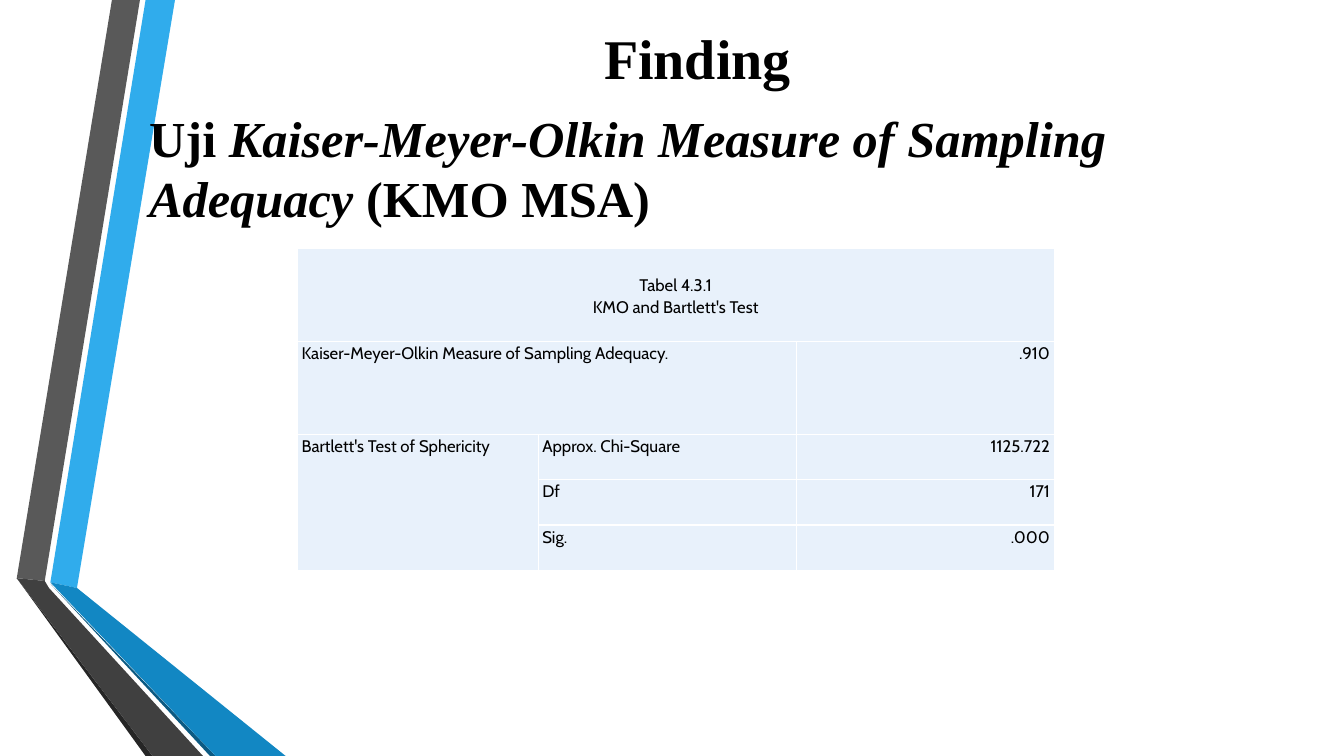
from lxml.etree import SubElement
from pptx import Presentation
from pptx.dml.color import RGBColor
from pptx.enum.text import MSO_ANCHOR as Anchor, MSO_AUTO_SIZE as Fit, PP_ALIGN as Align
from pptx.oxml.ns import qn
from pptx.util import Pt

BLACK = RGBColor(0x00, 0x00, 0x00)
WHITE = RGBColor(0xFF, 0xFF, 0xFF)
PALE = RGBColor(0xE8, 0xF1, 0xFB)
SKY = RGBColor(0x30, 0xAC, 0xEC)
BLUE = RGBColor(0x12, 0x87, 0xC3)
NAVY = RGBColor(0x0C, 0x5A, 0x82)
GRAY = RGBColor(0x59, 0x59, 0x59)
DARK = RGBColor(0x40, 0x40, 0x40)
COAL = RGBColor(0x26, 0x26, 0x26)
SERIF, SANS = "Times New Roman", "Cabin"

TITLE = "Finding"
HEAD = [
    ("Uji ", False),
    ("Kaiser-Meyer-Olkin Measure of Sampling Adequacy", True),
    (" (KMO MSA)", False),
]
ROWS = [
    ("Tabel 4.3.1\nKMO and Bartlett's Test", "", ""),
    ("Kaiser-Meyer-Olkin Measure of Sampling Adequacy.", "", ".910"),
    ("Bartlett's Test of Sphericity", "Approx. Chi-Square", "1125.722"),
    ("", "Df", "171"),
    ("", "Sig.", ".000"),
]
SPANS = [((0, 0), (0, 2)), ((1, 0), (1, 1)), ((2, 0), (4, 0))]
WIDTHS = [172, 184.3, 184.3]
HEIGHTS = [66.2, 66.2, 32.4, 32.4, 32.4]
BANDS = [
    (SKY, [(36, 416.2), (55.4, 419.8), (124.6, 0), (104.4, 0)]),
    (GRAY, [(100.1, 0), (79.9, 0), (11.5, 412.6), (31.7, 415.4)]),
    (COAL, [(11.5, 412.6), (104.4, 540), (108.7, 540)]),
    (NAVY, [(36, 416.9), (149.8, 540), (154.1, 540)]),
    (BLUE, [(36, 416.5), (154.1, 540), (203.8, 540), (55.4, 419.8)]),
    (DARK, [(145.4, 540), (34.6, 419.8), (31.7, 415.4), (11.5, 412.6), (108.7, 540)]),
]


def style(font, name, size, bold=False):
    font.name, font.size, font.bold = name, Pt(size), bold
    font.color.rgb = BLACK


def edge(cell):
    props = cell._tc.get_or_add_tcPr()
    for spot, side in enumerate(("lnL", "lnR", "lnT", "lnB")):
        line = SubElement(props, qn("a:" + side), w=str(Pt(1)))
        fill = SubElement(line, qn("a:solidFill"))
        SubElement(fill, qn("a:srgbClr"), val=str(WHITE))
        props.insert(spot, line)


def draw_bands(slide):
    for color, points in BANDS:
        pen = slide.shapes.build_freeform(*points[0], scale=Pt(1))
        pen.add_line_segments(points[1:], close=True)
        band = pen.convert_to_shape()
        band.shadow.inherit = False
        band.fill.solid()
        band.fill.fore_color.rgb = color
        band.line.fill.background()


def set_title(slide):
    title = slide.shapes.title
    title.left, title.top, title.width, title.height = Pt(103.7), Pt(4), Pt(789), Pt(73)
    frame = title.text_frame
    frame.text = TITLE
    frame.auto_size = Fit.NONE
    frame.vertical_anchor = Anchor.MIDDLE
    para = frame.paragraphs[0]
    para.alignment = Align.CENTER
    style(para.font, SERIF, 40, True)


def add_table(slide):
    frame = slide.shapes.add_table(
        len(ROWS), len(WIDTHS), Pt(212.4), Pt(177.8), Pt(sum(WIDTHS)), Pt(sum(HEIGHTS)))
    table = frame.table
    table.first_row = table.horz_banding = False
    for col, width in zip(table.columns, WIDTHS):
        col.width = Pt(width)
    for row, height in zip(table.rows, HEIGHTS):
        row.height = Pt(height)
    for first, last in SPANS:
        table.cell(*first).merge(table.cell(*last))
    for r, row in enumerate(ROWS):
        for c, text in enumerate(row):
            cell = table.cell(r, c)
            cell.margin_left = cell.margin_right = Pt(3)
            cell.margin_top = cell.margin_bottom = 0
            cell.vertical_anchor = Anchor.TOP if r else Anchor.MIDDLE
            cell.fill.solid()
            cell.fill.fore_color.rgb = PALE
            edge(cell)
            cell.text = text
            for para in cell.text_frame.paragraphs:
                para.line_spacing = Pt(16)
                para.alignment = Align.CENTER if r == 0 else Align.RIGHT if c == 2 else Align.LEFT
                style(para.font, SANS, 12)


def add_head(slide):
    box = slide.shapes.add_textbox(Pt(99.4), Pt(72.7), Pt(836.6), Pt(138))
    box.text_frame.word_wrap = True
    para = box.text_frame.paragraphs[0]
    style(para.font, SERIF, 36, True)
    for text, slant in HEAD:
        run = para.add_run()
        run.text = text
        style(run.font, SERIF, 36, True)
        run.font.italic = slant


def main():
    deck = Presentation()
    deck.slide_width, deck.slide_height = Pt(960), Pt(540)
    slide = deck.slides.add_slide(deck.slide_layouts[5])
    draw_bands(slide)
    set_title(slide)
    add_table(slide)
    add_head(slide)
    deck.save("out.pptx")


if __name__ == "__main__":
    main()
